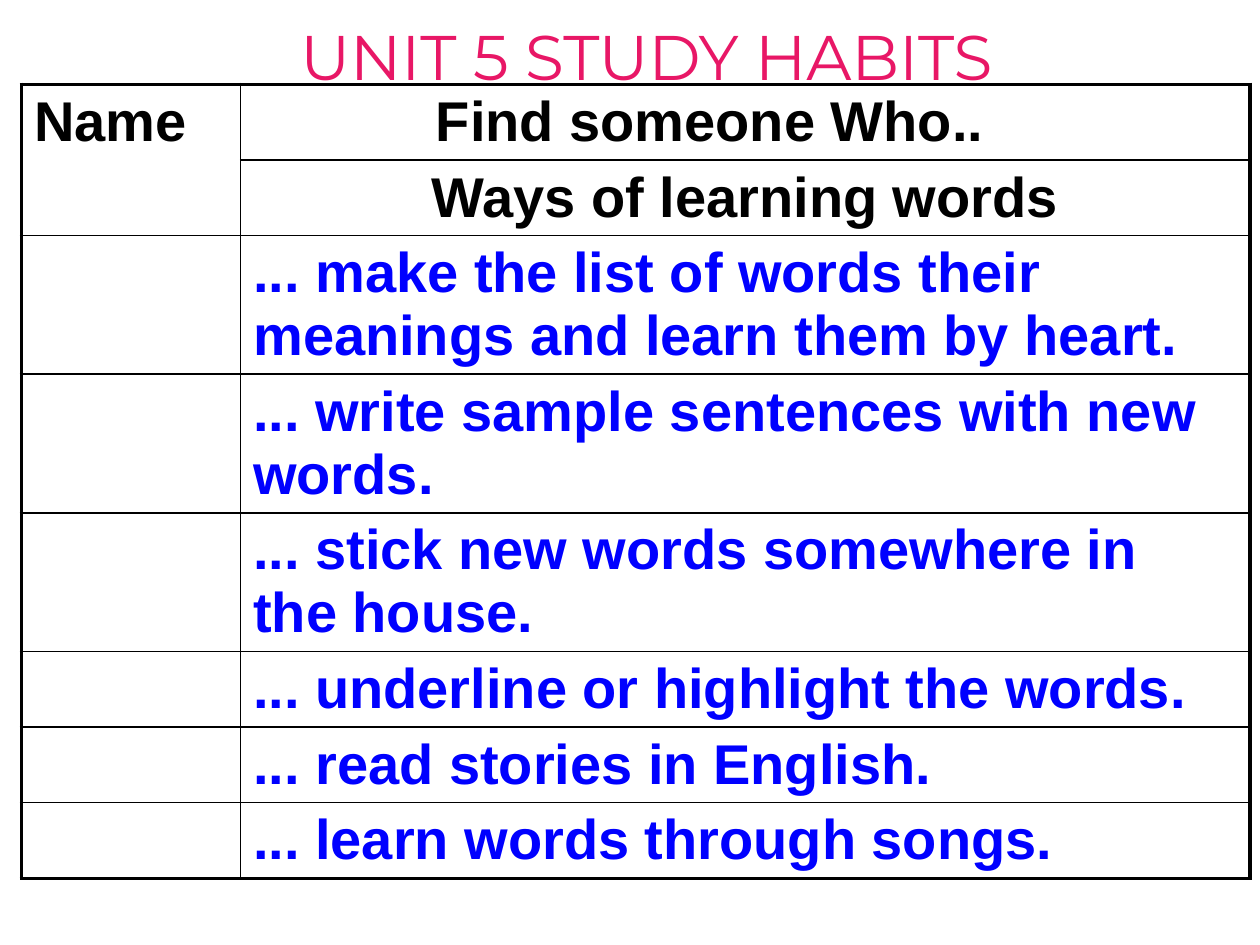
from lxml.etree import SubElement
from pptx import Presentation
from pptx.dml.color import RGBColor
from pptx.enum.text import MSO_ANCHOR, MSO_AUTO_SIZE, PP_ALIGN
from pptx.oxml.ns import qn
from pptx.util import Inches, Pt

COLORS = {"title": "E81766", "heading": "000000", "way": "0000FF", "border": "000000"}
COLUMN_WIDTHS = (1.74, 8.01)
LINE_HEIGHT, CELL_PADDING = 0.5, 0.1
OUTER_BORDER, INNER_BORDER = 2.25, 1
HEADING_ROWS = 2
# Each way of learning, with the number of lines it takes up
WAYS = (
    ("... make the list of words their meanings and learn them by heart.", 2),
    ("... write sample sentences with new words.", 2),
    ("... stick new words somewhere in the house.", 2),
    ("... underline or highlight the words.", 1),
    ("... read stories in English.", 1),
    ("... learn words through songs.", 1),
)


def style_font(paragraph, name, size, color, bold):
    font = paragraph.font
    font.name, font.size, font.bold = name, Pt(size), bold
    font.color.rgb = RGBColor.from_string(COLORS[color])


def add_title(slide, text):
    title = slide.shapes.title
    title.left, title.top = Inches(2), Inches(0.09)
    title.width, title.height = Inches(6.26), Inches(0.71)
    frame = title.text_frame
    frame.text = text
    frame.word_wrap = False
    frame.auto_size = MSO_AUTO_SIZE.NONE
    frame.vertical_anchor = MSO_ANCHOR.TOP
    paragraph = frame.paragraphs[0]
    paragraph.alignment = PP_ALIGN.CENTER
    style_font(paragraph, "Montserrat", 36, "title", False)


def set_borders(cell, widths):
    """Draw the left, right, top and bottom borders, widths in points."""
    properties = cell._tc.get_or_add_tcPr()
    for tag, width in zip(("a:lnL", "a:lnR", "a:lnT", "a:lnB"), widths):
        line = SubElement(properties, qn(tag), w=str(Pt(width)))
        fill = SubElement(line, qn("a:solidFill"))
        SubElement(fill, qn("a:srgbClr"), val=COLORS["border"])


def fill_cell(cell, text, color, alignment=PP_ALIGN.LEFT):
    cell.text = text
    paragraph = cell.text_frame.paragraphs[0]
    paragraph.alignment = alignment
    style_font(paragraph, "Arial", 32, color, True)


def add_grid(slide):
    """Add the empty table with a heavy frame and thin inner lines."""
    line_counts = [1] * HEADING_ROWS + [lines for _, lines in WAYS]
    heights = [lines * LINE_HEIGHT + CELL_PADDING for lines in line_counts]
    row_count, column_count = len(heights), len(COLUMN_WIDTHS)
    table = slide.shapes.add_table(
        row_count, column_count, Inches(0.17), Inches(0.67),
        Inches(sum(COLUMN_WIDTHS)), Inches(sum(heights))).table
    table.first_row = table.horz_banding = False
    for column, width in zip(table.columns, COLUMN_WIDTHS):
        column.width = Inches(width)
    for row_index, height in enumerate(heights):
        table.rows[row_index].height = Inches(height)
        for column_index in range(column_count):
            cell = table.cell(row_index, column_index)
            on_frame = (column_index == 0, column_index == column_count - 1,
                        row_index == 0, row_index == row_count - 1)
            set_borders(cell, [OUTER_BORDER if outer else INNER_BORDER for outer in on_frame])
            cell.fill.background()
    return table


def main():
    presentation = Presentation()
    presentation.slide_width, presentation.slide_height = Inches(10), Inches(7.5)
    slide = presentation.slides.add_slide(presentation.slide_layouts[5])
    add_title(slide, "UNIT 5 STUDY HABITS")

    table = add_grid(slide)
    table.cell(0, 0).merge(table.cell(1, 0))
    fill_cell(table.cell(0, 0), "Name", "heading", PP_ALIGN.JUSTIFY)
    fill_cell(table.cell(0, 1), "Find someone Who..", "heading")
    table.cell(0, 1).margin_left = Inches(1.55)
    fill_cell(table.cell(1, 1), "Ways of learning words", "heading", PP_ALIGN.CENTER)
    for row_index, (way, _) in enumerate(WAYS, start=HEADING_ROWS):
        fill_cell(table.cell(row_index, 1), way, "way")
    presentation.save("out.pptx")


if __name__ == "__main__":
    main()
